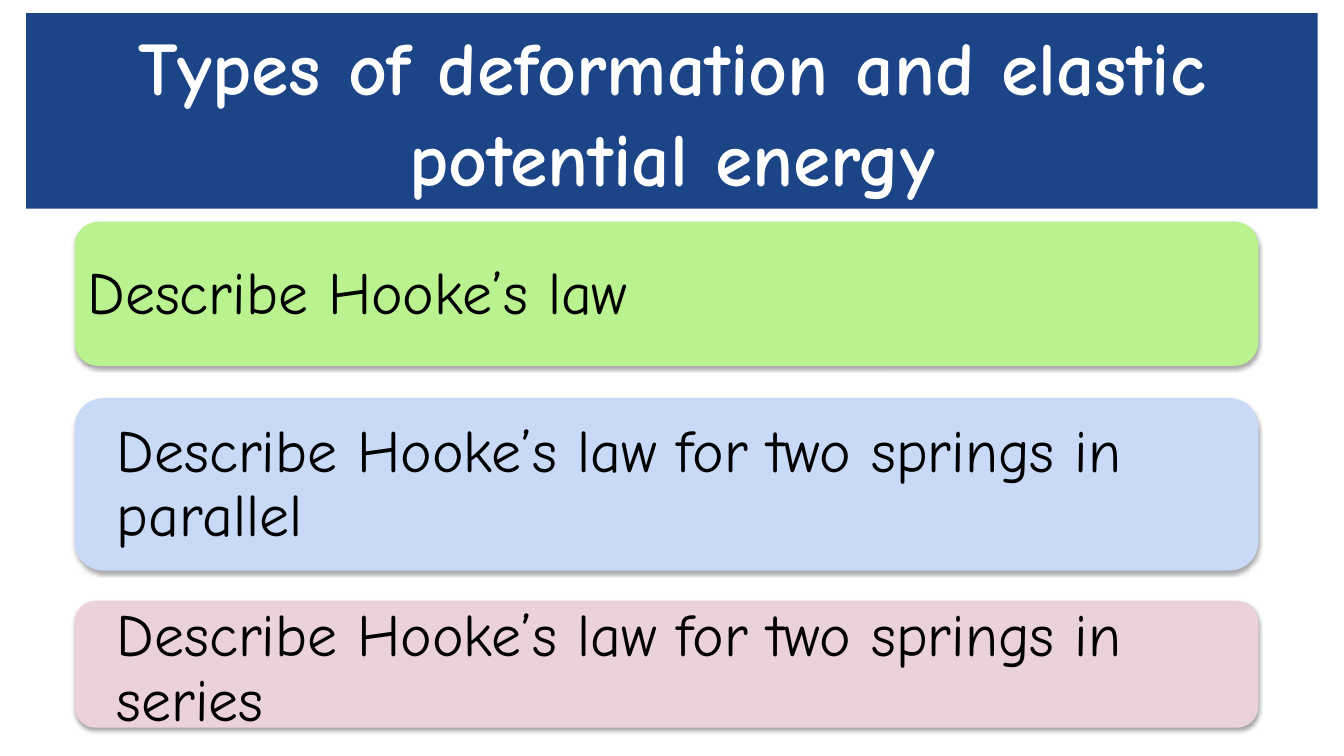
from lxml import etree
from pptx import Presentation
from pptx.dml.color import RGBColor
from pptx.enum.shapes import MSO_SHAPE as Shape
from pptx.enum.text import MSO_ANCHOR as Anchor, PP_ALIGN as Align
from pptx.oxml.ns import qn
from pptx.util import Inches, Pt

FONT = "Comic Neue"
BLUE = RGBColor(0x1C, 0x45, 0x87)
GREEN = RGBColor(0xB9, 0xF2, 0x8E)
PALE_BLUE = RGBColor(0xC9, 0xDA, 0xF8)
PINK = RGBColor(0xEA, 0xD1, 0xDC)
BLACK = RGBColor(0, 0, 0)
WHITE = RGBColor(255, 255, 255)

CARD_LEFT, CARD_WIDTH = 0.74, 11.74
# card top, card height, fill, text box (left, top, width, height), objective
OBJECTIVES = [
    (2.2, 1.43, GREEN, (0.53, 2.2, 12.47, 1.45),
     "Describe Hooke’s law"),
    (3.95, 1.71, PALE_BLUE, (0.82, 4.3, 11.58, 1.03),
     "Describe Hooke’s law for two springs in parallel"),
    (5.96, 1.26, PINK, (0.82, 5.93, 11.52, 1.43),
     "Describe Hooke’s law for two springs in series"),
]


def add_filled_shape(slide, preset, box, fill):
    shape = slide.shapes.add_shape(preset, *map(Inches, box))
    shape.fill.solid()
    shape.fill.fore_color.rgb = fill
    shape.line.fill.background()
    shape.shadow.inherit = False
    return shape


def add_soft_shadow(shape):
    """Give the shape a faint blurred shadow falling straight down."""
    effects = shape._element.spPr.find(qn("a:effectLst"))
    shadow = etree.SubElement(
        effects, qn("a:outerShdw"), blurRad=str(Pt(3.1)), dist=str(Pt(1.8)),
        dir="5400000", algn="t", rotWithShape="0")
    color = etree.SubElement(shadow, qn("a:srgbClr"), val="000000")
    etree.SubElement(color, qn("a:alpha"), val="35000")


def write_text(shape, text, size, color, align, side_inset, end_inset):
    frame = shape.text_frame
    frame.word_wrap = True
    frame.vertical_anchor = Anchor.MIDDLE
    frame.margin_left = frame.margin_right = Inches(side_inset)
    frame.margin_top = frame.margin_bottom = Inches(end_inset)
    paragraph = frame.paragraphs[0]
    paragraph.text = text
    paragraph.alignment = align
    paragraph.font.name = FONT
    paragraph.font.size = Pt(size)
    paragraph.font.color.rgb = color
    return paragraph


def add_objective(slide, top, height, fill, text_box, text):
    card = add_filled_shape(slide, Shape.ROUNDED_RECTANGLE,
                            (CARD_LEFT, top, CARD_WIDTH, height), fill)
    add_soft_shadow(card)
    label = slide.shapes.add_textbox(*map(Inches, text_box))
    paragraph = write_text(label, text, 42.7, BLACK, Align.LEFT, 0.34, 0)
    paragraph.line_spacing = 0.9


def add_title(slide, text):
    banner = add_filled_shape(slide, Shape.RECTANGLE,
                              (0.26, 0.13, 12.81, 1.94), BLUE)
    paragraph = write_text(banner, text, 54, WHITE, Align.CENTER, 0.13, 0.07)
    paragraph.font.bold = True


def main():
    deck = Presentation()
    deck.slide_width, deck.slide_height = Inches(13.33), Inches(7.5)
    slide = deck.slides.add_slide(deck.slide_layouts[6])
    for objective in OBJECTIVES:
        add_objective(slide, *objective)
    add_title(slide, "Types of deformation and elastic potential energy")
    deck.save("out.pptx")


if __name__ == "__main__":
    main()
